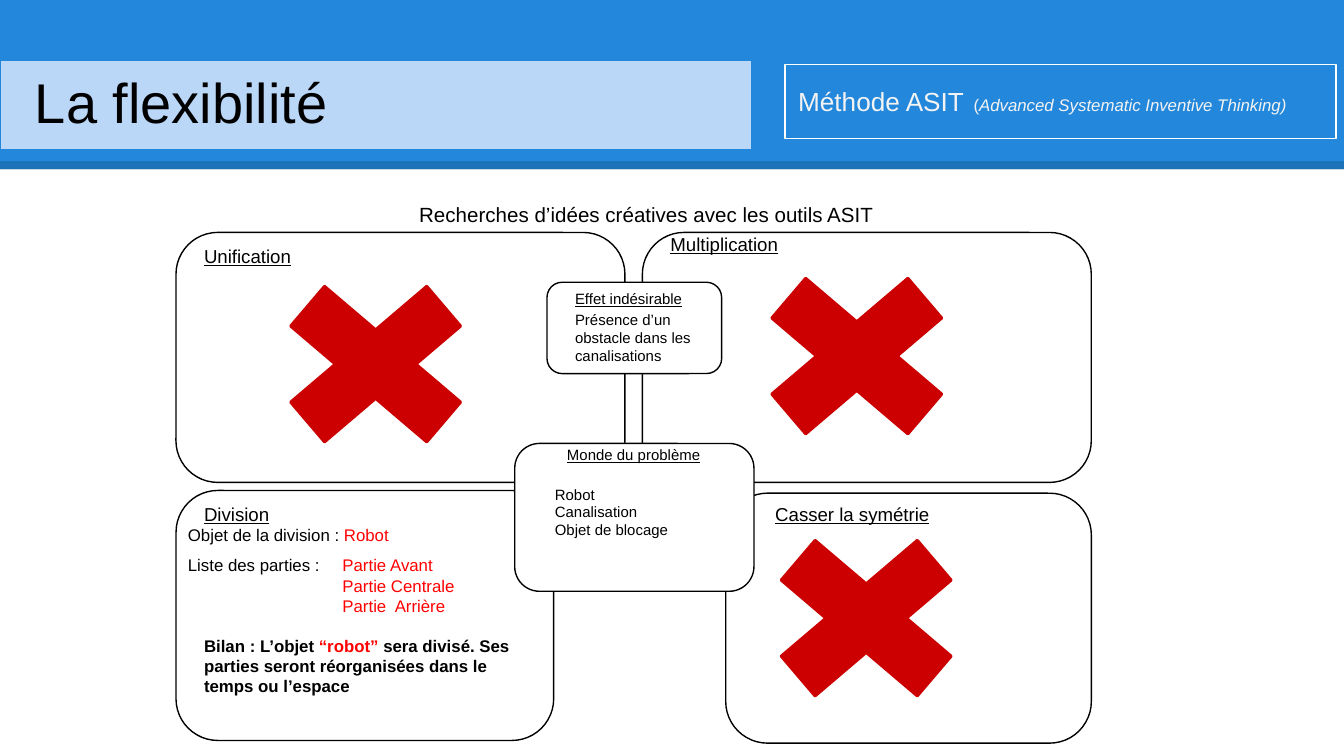
from lxml import etree
from pptx import Presentation
from pptx.dml.color import RGBColor
from pptx.enum.shapes import MSO_CONNECTOR, MSO_SHAPE
from pptx.enum.text import MSO_ANCHOR, PP_ALIGN
from pptx.oxml.ns import qn
from pptx.util import Inches, Pt

BLUE, PALE, WHITE, BLACK = "2388DB", "BBD7F8", "FFFFFF", "000000"
RED, CROSS_RED, LIGHT = "FF0000", "CC0000", "F3F3F3"


def rgb(value):
    return RGBColor.from_string(value)


def add_box(s, kind, box, fill=None, line=None, width=0.75, adj=None):
    sp = s.shapes.add_shape(kind, *map(Inches, box))
    sp.shadow.inherit = False
    if fill:
        sp.fill.solid()
        sp.fill.fore_color.rgb = rgb(fill)
    else:
        sp.fill.background()
    if line:
        sp.line.color.rgb = rgb(line)
        sp.line.width = Pt(width)
    else:
        sp.line.fill.background()
    if adj is not None:
        sp.adjustments[0] = adj
    return sp


def add_round_box(s, box, fill=WHITE):
    return add_box(s, MSO_SHAPE.ROUNDED_RECTANGLE, box, fill, BLACK, adj=0.167)


def write(sp, paragraphs, size=9, color=BLACK, bold=False, underline=False,
          anchor=MSO_ANCHOR.TOP):
    """Each paragraph is a string or a list of (text, overrides) runs."""
    tf = sp.text_frame
    tf.word_wrap = True
    tf.vertical_anchor = anchor
    tf.margin_left = tf.margin_right = tf.margin_top = tf.margin_bottom = Inches(0.1)
    for i, runs in enumerate(paragraphs):
        p = tf.paragraphs[0] if i == 0 else tf.add_paragraph()
        p.alignment = PP_ALIGN.LEFT
        for text, fmt in [(runs, {})] if isinstance(runs, str) else runs:
            r = p.add_run()
            r.text = text
            r.font.name = "Arial"
            r.font.size = Pt(fmt.get("size", size))
            r.font.color.rgb = rgb(fmt.get("color", color))
            r.font.bold = bold
            r.font.italic = fmt.get("italic", False)
            r.font.underline = underline
    return sp


def add_text(s, box, paragraphs, **fmt):
    return write(s.shapes.add_textbox(*map(Inches, box)), paragraphs, **fmt)


def add_header(s, x, y, w, h):
    add_box(s, MSO_SHAPE.RECTANGLE, (x, y, w, h), BLUE)
    rule_y = Inches(y + h - 0.03)
    rule = s.shapes.add_connector(MSO_CONNECTOR.STRAIGHT, Inches(x), rule_y,
                                  Inches(x + w), rule_y)
    rule.line.color.rgb = rgb(BLACK)
    rule.line.width = Pt(4.5)
    color = rule.element.spPr.find(".//" + qn("a:srgbClr"))
    etree.SubElement(color, qn("a:alpha"), val="15000")
    etree.SubElement(rule.element.spPr, qn("a:effectLst"))
    add_box(s, MSO_SHAPE.RECTANGLE, (x, y + 0.44, 5.6, 0.68), PALE, BLUE, 1.5)

    method = add_box(s, MSO_SHAPE.RECTANGLE, (x + 5.84, y + 0.48, 4.1, 0.55), line=WHITE)
    write(method, [[("Méthode ASIT", {"size": 14}), (" ", {"size": 18}), ("(", {}),
                    ("Advanced Systematic Inventive Thinking)", {"italic": True})]],
          color=LIGHT)

    title = s.shapes.title
    title.left, title.top = Inches(x + 0.16), Inches(y)
    title.width, title.height = Inches(4.43), Inches(1.51)
    write(title, ["La flexibilité"], size=30, anchor=MSO_ANCHOR.MIDDLE)
    title.element.getparent().append(title.element)


def add_tool(s, box, name, label_at, cross_at=None, fill=WHITE):
    """One ASIT tool: frame, underlined name and, if rejected, a red cross."""
    x, y = box[:2]
    add_round_box(s, box, fill)
    add_text(s, (x + label_at[0], y + label_at[1], 1.5, 0.33), [name],
             size=10, underline=True)
    if cross_at:
        add_box(s, MSO_SHAPE.MATH_MULTIPLY,
                (x + cross_at[0], y + cross_at[1], 1.95, 1.66),
                CROSS_RED, CROSS_RED, 1.5, adj=0.235)


def add_division(s, x, y, w, h):
    add_tool(s, (x, y, w, h), "Division", (0.11, 0.01), fill=None)
    red = {"color": RED}
    add_text(s, (x - 0.01, y + 0.18, 1.89, 0.47),
             [[("Objet de la division : ", {}), ("Robot", red)]])
    parts = add_text(s, (x - 0.01, y + 0.38, 2.66, 0.64),
                     [[("Liste des parties :\t", {}), ("Partie Avant", red)],
                      [("Partie Centrale", red)], [("Partie  Arrière", red)]])
    for i, p in enumerate(parts.text_frame.paragraphs):
        pPr = p._p.get_or_add_pPr()
        pPr.set("marL", str(Inches(1.15)))
        pPr.set("indent", str(Inches(0 if i else -1.15)))
    add_text(s, (x + 0.11, y + 0.98, 2.66, 0.64),
             [[("Bilan : L’objet ", {}), ("“robot”", red),
               (" sera divisé. Ses parties seront réorganisées dans le temps ou l’espace",
                {})]], bold=True)


def add_problem(s, box, heading, heading_at, lines, lines_at):
    """Central box with an underlined heading above plain lines."""
    x, y = box[:2]
    add_round_box(s, box)
    add_text(s, (x + heading_at[0], y + heading_at[1], 1.35, 0.33), [heading],
             size=8, underline=True)
    add_text(s, (x + lines_at[0], y + lines_at[1], 1.35, 0.68), lines, size=8)


def main():
    prs = Presentation()
    prs.slide_width = Inches(10)
    prs.slide_height = prs.slide_width * 9 // 16
    s = prs.slides.add_slide(prs.slide_layouts[5])
    add_header(s, 0, 0, 10, 1.26)
    add_text(s, (3.02, 1.41, 4.28, 0.33),
             ["Recherches d’idées créatives avec les outils ASIT"], size=11)

    add_tool(s, (1.31, 1.73, 3.34, 1.86), "Unification", (0.11, 0.01), (0.51, 0.15))
    add_tool(s, (4.78, 1.73, 3.34, 1.86), "Multiplication", (0.11, -0.08), (0.62, 0.09))
    add_division(s, 1.31, 3.65, 2.81, 1.86)
    add_tool(s, (5.4, 3.67, 2.72, 1.86), "Casser la symétrie", (0.27, -0.01), (0.07, 0.1))

    add_problem(s, (3.83, 3.3, 1.78, 1.1), "Monde du problème", (0.29, -0.05),
                ["Robot", "Canalisation", "Objet de blocage"], (0.2, 0.21))
    add_problem(s, (4.07, 2.1, 1.3, 0.68), "Effet indésirable", (0.11, -0.01),
                ["Présence d’un", "obstacle dans les", "canalisations"], (0.11, 0.11))
    prs.save("out.pptx")


if __name__ == "__main__":
    main()
